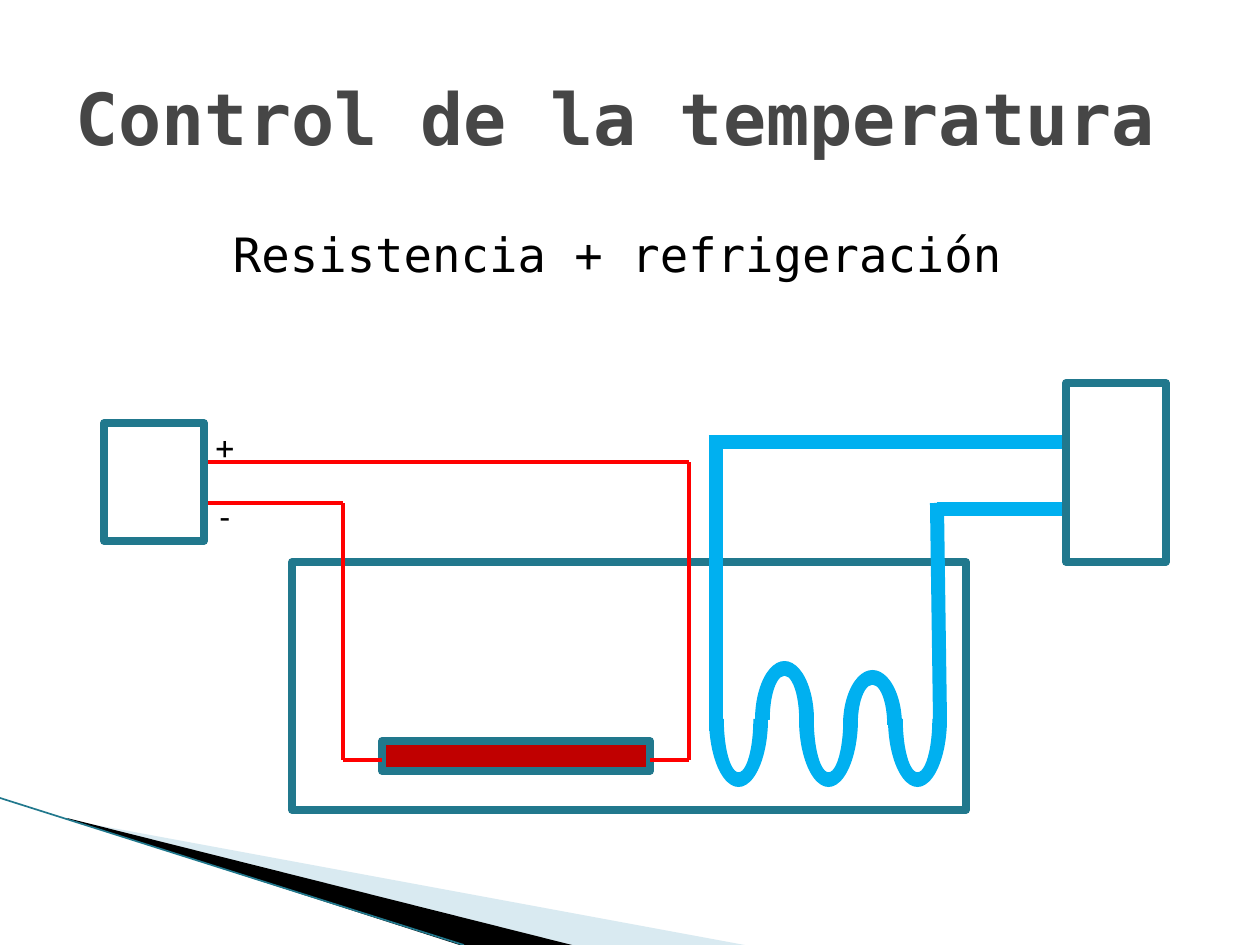
from dataclasses import dataclass

from lxml.etree import SubElement
from pptx import Presentation
from pptx.dml.color import RGBColor
from pptx.enum.shapes import MSO_CONNECTOR as Link, MSO_SHAPE as Preset
from pptx.enum.text import MSO_ANCHOR as Anchor, PP_ALIGN as Align
from pptx.oxml.ns import qn
from pptx.util import Emu, Pt

EMU_PER_PX = 914400 / 126


@dataclass(frozen=True)
class Theme:
    font: str = "DejaVu Sans Mono"
    title: str = "464646"
    ink: str = "000000"
    frame: str = "21788D"
    heater: str = "C00000"
    wire: str = "FF0000"
    coolant: str = "00B0F0"
    wedge: str = "A0CBDC"
    title_size: int = 41
    body_size: int = 27
    label_size: int = 18
    frame_width: float = 4.33
    wire_width: int = 2
    pipe_width: int = 8
    edge_width: float = 0.95


THEME = Theme()


def px(length):
    return Emu(round(length * EMU_PER_PX))


def place(box, left, top, width, height):
    return [px(v) for v in (box[0] + left, box[1] + top, width, height)]


def color_fill(shape, color):
    if color is None:
        shape.fill.background()
    else:
        shape.fill.solid()
        shape.fill.fore_color.rgb = RGBColor.from_string(color)


def add_text(page, area, text, *, size, color=THEME.ink, bold=False,
             align=Align.LEFT, anchor=Anchor.TOP, margin=None):
    box = page.shapes.add_textbox(*area)
    frame = box.text_frame
    frame.word_wrap = True
    frame.vertical_anchor = anchor
    if margin is not None:
        frame.margin_top = frame.margin_bottom = px(margin)
    para = frame.paragraphs[0]
    para.alignment = align
    span = para.add_run()
    span.text = text
    span.font.name = THEME.font
    span.font.size = Pt(size)
    span.font.bold = bold
    span.font.color.rgb = RGBColor.from_string(color)


def add_frame(page, area, fill=None):
    shape = page.shapes.add_shape(Preset.RECTANGLE, *area)
    shape.shadow.inherit = False
    color_fill(shape, fill)
    shape.line.color.rgb = RGBColor.from_string(THEME.frame)
    shape.line.width = Pt(THEME.frame_width)


def add_lines(page, box, ends, color, width):
    for x1, y1, x2, y2 in ends:
        line = page.shapes.add_connector(
            Link.STRAIGHT, px(box[0] + x1), px(box[1] + y1),
            px(box[0] + x2), px(box[1] + y2))
        line.line.color.rgb = RGBColor.from_string(color)
        line.line.width = Pt(width)
        SubElement(line._element.spPr, qn("a:effectLst"))


def add_wedge(page, box, points, color, opacity=None):
    start, *rest = [(box[0] + x, box[1] + y) for x, y in points]
    builder = page.shapes.build_freeform(*start, scale=EMU_PER_PX)
    builder.add_line_segments(rest, close=True)
    shape = builder.convert_to_shape()
    shape.shadow.inherit = False
    color_fill(shape, color)
    shape.line.fill.background()
    if opacity is not None:
        tint = shape._element.spPr.find(qn("a:solidFill"))[0]
        SubElement(tint, qn("a:alpha"), val=str(opacity * 1000))


def corner_decoration(page, box):
    add_wedge(page, box, [(69, 22), (750, 148), (575, 148), (69, 21)],
              THEME.wedge, opacity=40)
    add_wedge(page, box, [(67, 20), (576, 148), (469, 150), (68, 21)], THEME.ink)
    add_lines(page, box, [(0, 0, 464, 147)], THEME.frame, THEME.edge_width)


def headings(page, box):
    add_text(page, place(box, 21, 187, 1066, 55), "Resistencia + refrigeración",
             size=THEME.body_size, align=Align.CENTER, margin=0)
    add_text(page, place(box, 0, 0, 1134, 158), "Control de la temperatura",
             size=THEME.title_size, color=THEME.title, bold=True,
             anchor=Anchor.MIDDLE)


def heating_circuit(page, box):
    # Heating resistance
    add_frame(page, place(box, 278, 318, 268, 30), THEME.heater)
    # Wires from the supply to both ends of the resistance
    supply, near, far = 99, 239, 585
    plus, minus, bottom = 39, 80, 337
    add_lines(page, box, [
        (278, bottom, near, bottom),
        (near, bottom, near, minus),
        (near, minus, supply, minus),
        (far, bottom, 546, bottom),
        (far, bottom, far, plus),
        (far, plus, supply, plus),
    ], THEME.wire, THEME.wire_width)
    # Power supply with its poles
    add_frame(page, place(box, 0, 0, 100, 118))
    for text, top in (("+", -1), ("-", 68)):
        add_text(page, place(box, supply, top, 49, 50), text, size=THEME.label_size)


def cooling_circuit(page, box):
    # Coil: three lower bends joined by two upper ones
    bends = [(round(89.5 * i), 268, 136, 180) for i in range(3)]
    bends += [(46, 278, 118, 0), (134, 287, 110, 0)]
    for left, top, height, turn in bends:
        bend = page.shapes.add_shape(Preset.BLOCK_ARC,
                                     *place(box, left, top, 59, height))
        bend.rotation = turn
        bend.shadow.inherit = False
        color_fill(bend, THEME.coolant)
        bend.line.fill.background()
    # Pipes between the coil and the cooler
    add_lines(page, box, [
        (231, 336, 228, 120),
        (0, 59, 357, 59),
        (228, 126, 357, 126),
        (7, 348, 7, 59),
    ], THEME.coolant, THEME.pipe_width)
    # Cooler
    add_frame(page, place(box, 357, 0, 100, 179))


def main():
    deck = Presentation()
    deck.slide_width, deck.slide_height = px(1260), px(945)
    page = deck.slides.add_slide(deck.slide_layouts[6])
    corner_decoration(page, (0, 798))
    headings(page, (63, 38))
    # Vessel
    add_frame(page, place((292, 562), 0, 0, 674, 248))
    heating_circuit(page, (104, 423))
    cooling_circuit(page, (709, 383))
    deck.save("out.pptx")


if __name__ == "__main__":
    main()
